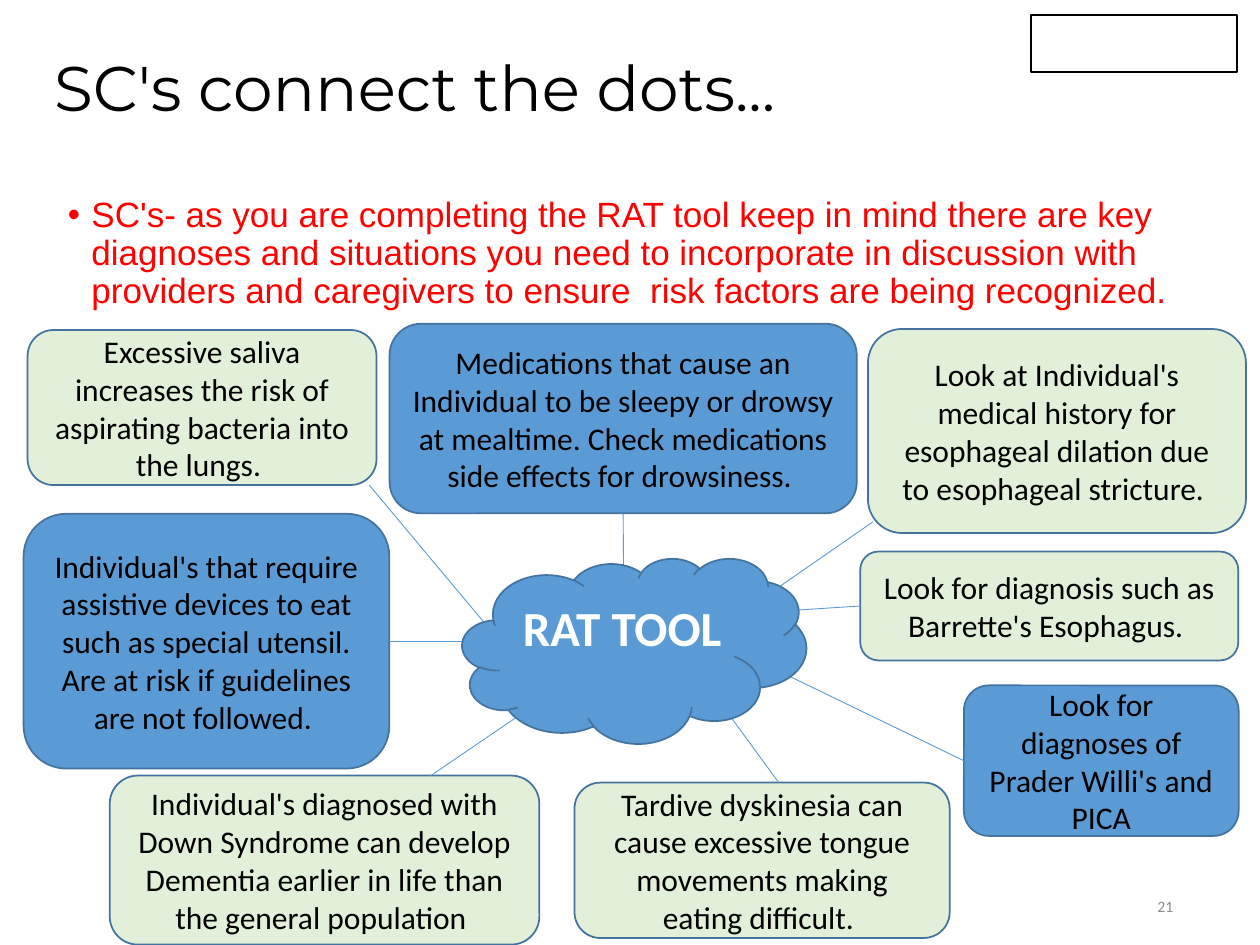
import pptx
import pptx.util
import pptx.dml.color
import pptx.enum.shapes
import pptx.enum.text
import pptx.oxml.ns
import lxml.etree

Pt = pptx.util.Pt
Kind = pptx.enum.shapes.MSO_SHAPE
Link = pptx.enum.shapes.MSO_CONNECTOR
Align = pptx.enum.text.PP_ALIGN
Anchor = pptx.enum.text.MSO_ANCHOR
qn = pptx.oxml.ns.qn


def tint(code):
    return pptx.dml.color.RGBColor.from_string(code)


def write(shape, text, color, form, align=Align.CENTER, anchor=Anchor.MIDDLE):
    frame = shape.text_frame
    frame.word_wrap = True
    frame.vertical_anchor = anchor
    para = frame.paragraphs[0]
    para.alignment = align
    run = para.add_run()
    run.text = text
    for key, value in form.items():
        setattr(run.font, key, value)
    run.font.color.rgb = tint(color)
    return para


blue, green, edge = "5B9BD5", "E2F0D9", "43739E"
label = {"name": "Calibri", "size": Pt(18)}

deck = pptx.Presentation()
deck.slide_width, deck.slide_height = Pt(720), Pt(540)
slide = deck.slides.add_slide(deck.slide_layouts[6])
shapes = slide.shapes

frame = shapes.add_shape(Kind.RECTANGLE, Pt(589), Pt(8.6), Pt(118), Pt(32.4))
frame.shadow.inherit = False
frame.fill.solid()
frame.fill.fore_color.rgb = tint("FFFFFF")
frame.line.color.rgb = tint("000000")
frame.line.width = Pt(1)

title = shapes.add_textbox(Pt(23.8), Pt(0), Pt(620.6), Pt(104.4))
para = write(title, "SC's connect the dots...", "000000",
             {"name": "Montserrat", "size": Pt(36)}, Align.LEFT)
para.line_spacing = 0.9

body = shapes.add_textbox(Pt(31.7), Pt(109.4), Pt(661.7), Pt(75.6))
para = write(body, "SC's- as you are completing the RAT tool keep in mind there are key diagnoses "
             "and situations you need to incorporate in discussion with providers and caregivers "
             "to ensure  risk factors are being recognized.", "FF0000",
             {"name": "Arial", "size": Pt(20)}, Align.LEFT, Anchor.TOP)
para.line_spacing = 0.9
props = para._p.get_or_add_pPr()
props.set("marL", str(Pt(13.5)))
props.set("indent", str(-Pt(13.5)))
lxml.etree.SubElement(props, qn("a:buFont")).set("typeface", "Arial")
lxml.etree.SubElement(props, qn("a:buChar")).set("char", "•")

number = shapes.add_textbox(Pt(515.5), Pt(503.3), Pt(162), Pt(28.8))
write(number, "21", "8C8C8C", {"name": "Calibri", "size": Pt(9)}, Align.RIGHT)

notes = {
    "saliva": (15.8, 188.6, 199.4, 88.6, green,
               "Excessive saliva increases the risk of aspirating bacteria into the lungs. "),
    "meds": (222.6, 185, 267, 108.4, blue,
             "Medications that cause an Individual to be sleepy or drowsy at mealtime. "
             "Check medications side effects for drowsiness. "),
    "barrette": (491.6, 315.2, 216, 62.2, green,
                 "Look for diagnosis such as Barrette's Esophagus. "),
    "dilation": (496, 188, 216, 116.6, green,
                 "Look at Individual's medical history for esophageal dilation "
                 "due to esophageal stricture. "),
    "pica": (550.8, 391.7, 157, 86, blue,
             "Look for diagnoses of Prader Willi's and PICA"),
    "tongue": (328.3, 447.2, 214.4, 88.8, green,
               "Tardive dyskinesia can cause excessive tongue movements "
               "making eating difficult. "),
    "down": (62.7, 443.2, 245.5, 96.6, green,
             "Individual's diagnosed with Down Syndrome can develop Dementia "
             "earlier in life than the general population "),
    "devices": (13.5, 293.6, 209, 145.6, blue,
                "Individual's that require assistive devices to eat such as special utensil. "
                "Are at risk if guidelines are not followed. "),
    "cloud": (264.2, 319, 196.6, 105.8, blue, "RAT TOOL"),
}

links = [
    (211, 277.2, 280.8, 360.7, None, None),
    (222.5, 366.4, 293, 366.4, "devices", 3),
    (246.2, 443.2, 308.2, 401, None, None),
    (445, 447.2, 409.7, 398.9, None, None),
    (550.8, 434.7, 447.1, 384.5, "pica", 1),
    (491.6, 346.3, 446.4, 349.2, "barrette", 1),
    (499, 298.1, 435.6, 342, None, None),
    (356.1, 293.4, 356.4, 337, "meds", 2),
]

boxes = {}
for name, (left, top, width, height, fill, text) in notes.items():
    hub = name == "cloud"
    if hub:
        for x, y, far, low, start, site in links:
            line = shapes.add_connector(Link.STRAIGHT, Pt(x), Pt(y), Pt(far), Pt(low))
            if start:
                line.begin_connect(boxes[start], site)
            line.line.color.rgb = tint(blue)
            line.line.width = Pt(0.5)
            lxml.etree.SubElement(line._element.spPr, qn("a:effectLst"))
    box = shapes.add_shape(Kind.CLOUD if hub else Kind.ROUNDED_RECTANGLE,
                           Pt(left), Pt(top), Pt(width), Pt(height))
    box.shadow.inherit = False
    box.fill.solid()
    box.fill.fore_color.rgb = tint(fill)
    box.line.color.rgb = tint(edge)
    box.line.width = Pt(1)
    if hub:
        box.text_frame.margin_bottom = Pt(25.6)
        write(box, text, "FFFFFF", {"name": "Calibri", "size": Pt(28), "bold": True})
    else:
        write(box, text, "000000", label)
    boxes[name] = box

deck.save("out.pptx")
